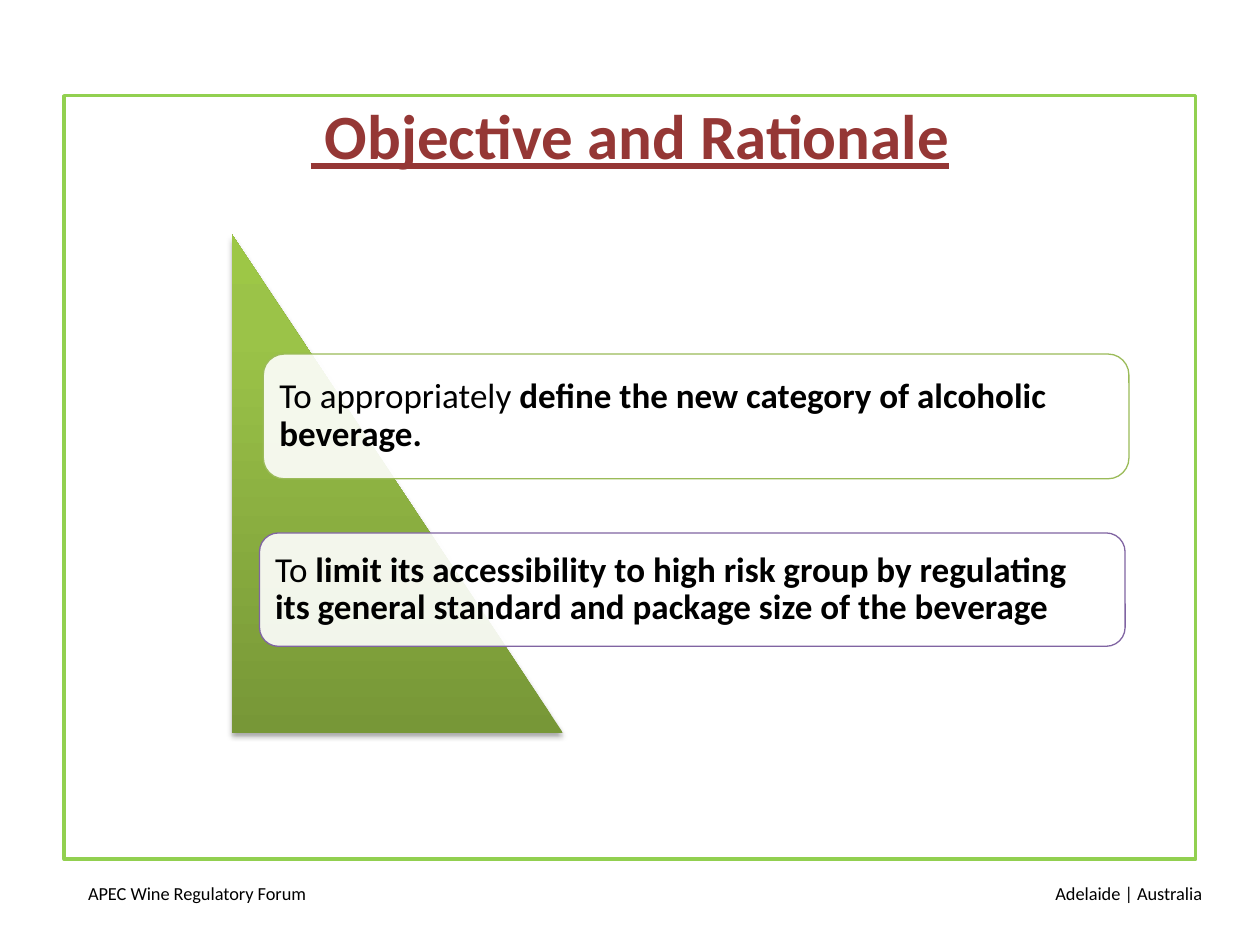
from lxml import etree
from pptx import Presentation
from pptx.dml.color import RGBColor
from pptx.enum import shapes, text
from pptx.oxml import ns, parse_xml
from pptx.util import Inches, Pt

BLACK = RGBColor(0x00, 0x00, 0x00)
WHITE = RGBColor(0xFF, 0xFF, 0xFF)
MAROON = RGBColor(0x95, 0x37, 0x35)
LIME = RGBColor(0x92, 0xD0, 0x50)
GREEN = RGBColor(0x9B, 0xBB, 0x59)
PURPLE = RGBColor(0x80, 0x64, 0xA2)
GRADIENT = [
    (0, RGBColor(0x77, 0x97, 0x37)),
    (80, RGBColor(0x9B, 0xC3, 0x48)),
    (100, RGBColor(0x9D, 0xC7, 0x46)),
]

TITLE = " Objective and Rationale"
FOOTERS = [
    ("APEC Wine Regulatory Forum", 0.6, text.PP_ALIGN.LEFT),
    ("Adelaide | Australia", 7.29, text.PP_ALIGN.RIGHT),
]
CARDS = [
    ((2.09, 2.81, 6.87, 0.99), GREEN, "To appropriately ",
     "define the new category of alcoholic beverage."),
    ((2.06, 4.23, 6.87, 0.9), PURPLE, "To ",
     "limit its accessibility to high risk group by regulating its general "
     "standard and package size of the beverage"),
]


def style(font, size, color=BLACK):
    font.name = "Calibri"
    font.size = Pt(size)
    font.color.rgb = color


def add_label(page, words, place, size, color, align, anchor):
    box = page.shapes.add_textbox(*map(Inches, place))
    frame = box.text_frame
    frame.word_wrap = True
    frame.vertical_anchor = anchor
    para = frame.paragraphs[0]
    para.text = words
    para.alignment = align
    style(para.font, size, color)
    return para


def add_shape(page, kind, place, line=None, width=0):
    shape = page.shapes.add_shape(kind, *map(Inches, place))
    shape.shadow.inherit = False
    shape.fill.background()
    if line is None:
        shape.line.fill.background()
    else:
        shape.line.color.rgb = line
        shape.line.width = Pt(width)
    return shape


def add_triangle(page):
    triangle = add_shape(page, shapes.MSO_SHAPE.RIGHT_TRIANGLE, (1.84, 1.86, 2.63, 3.96))
    stops = "".join(
        f'<a:gs pos="{place * 1000}"><a:srgbClr val="{color}"/></a:gs>'
        for place, color in GRADIENT
    )
    gradient = parse_xml(
        f'<a:gradFill {ns.nsdecls("a")} rotWithShape="1"><a:gsLst>{stops}</a:gsLst>'
        '<a:lin ang="16200000" scaled="0"/></a:gradFill>'
    )
    properties = triangle._element.spPr
    properties.replace(properties.find(ns.qn("a:noFill")), gradient)
    shadow = parse_xml(
        f'<a:outerShdw {ns.nsdecls("a")} blurRad="{Pt(3.1)}" dist="{Pt(1.8)}" '
        'dir="5400000" rotWithShape="0"><a:srgbClr val="000000">'
        '<a:alpha val="35000"/></a:srgbClr></a:outerShdw>'
    )
    properties.find(ns.qn("a:effectLst")).append(shadow)


def add_card(page, place, line, lead, emphasis):
    card = add_shape(page, shapes.MSO_SHAPE.ROUNDED_RECTANGLE, place, line, 0.75)
    card.fill.solid()
    card.fill.fore_color.rgb = WHITE
    color = card._element.spPr.find(ns.qn("a:solidFill"))[0]
    etree.SubElement(color, ns.qn("a:alpha"), val="90000")
    frame = card.text_frame
    frame.word_wrap = True
    frame.vertical_anchor = text.MSO_ANCHOR.MIDDLE
    for side in ("left", "right", "top", "bottom"):
        setattr(frame, f"margin_{side}", Inches(0.08))
    para = frame.paragraphs[0]
    para.alignment = text.PP_ALIGN.LEFT
    para.line_spacing = 0.9
    style(para.font, 20)
    for words, bold in ((lead, False), (emphasis, True)):
        span = para.add_run()
        span.text = words
        style(span.font, 20)
        span.font.bold = bold


def main():
    deck = Presentation()
    deck.slide_width, deck.slide_height = Inches(10), Inches(7.5)
    page = deck.slides.add_slide(deck.slide_layouts[6])

    add_shape(page, shapes.MSO_SHAPE.RECTANGLE, (0.51, 0.76, 8.98, 6.06), LIME, 2)
    for words, left, align in FOOTERS:
        add_label(page, words, (left, 6.95, 2.35, 0.4), 10.5, BLACK, align,
                  text.MSO_ANCHOR.TOP)
    title = add_label(page, TITLE, (0.5, 0.74, 9, 0.65), 36, MAROON,
                      text.PP_ALIGN.CENTER, text.MSO_ANCHOR.MIDDLE)
    title.font.bold = True
    title.font.underline = True
    add_triangle(page)
    for card in CARDS:
        add_card(page, *card)

    deck.save("out.pptx")


if __name__ == "__main__":
    main()
